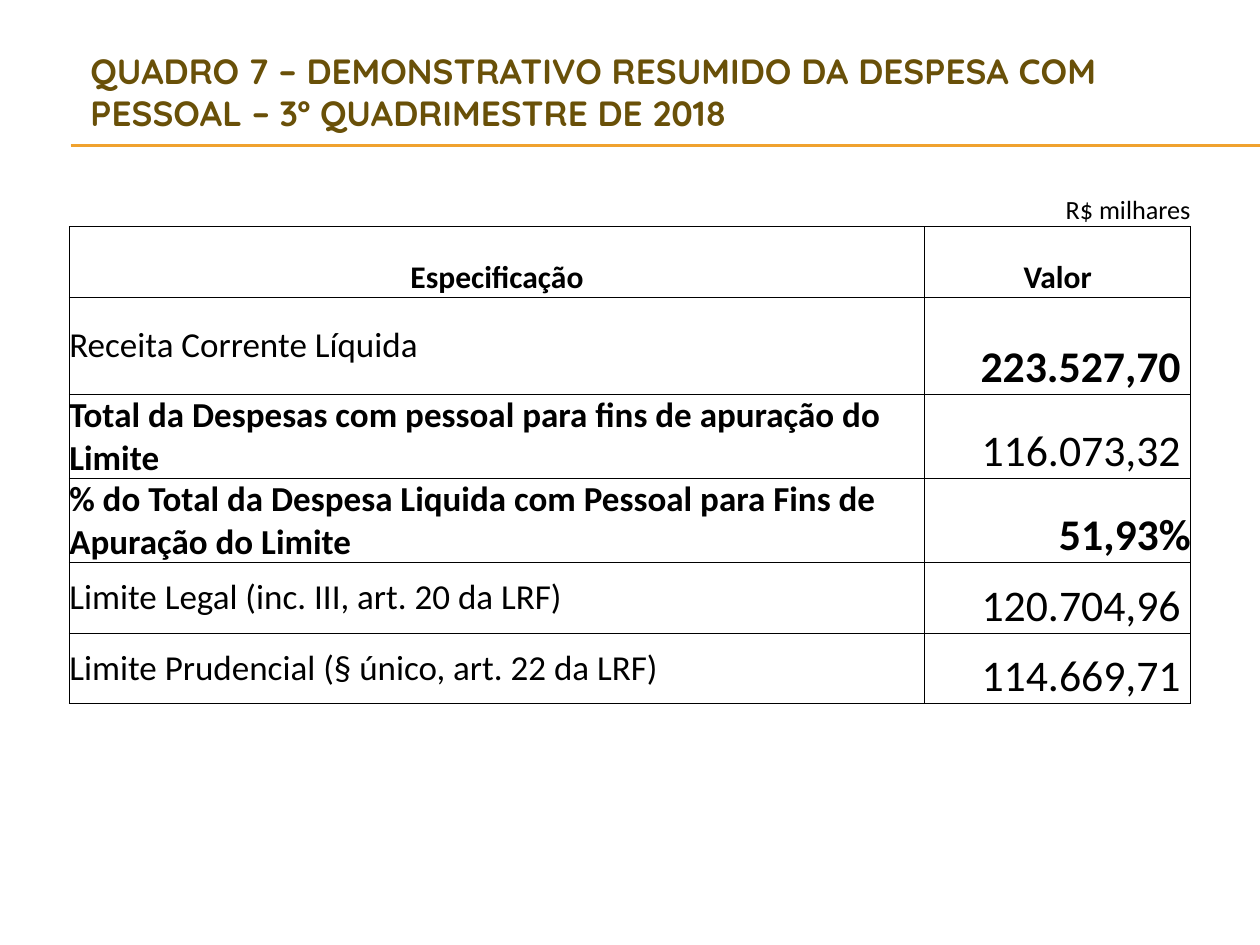
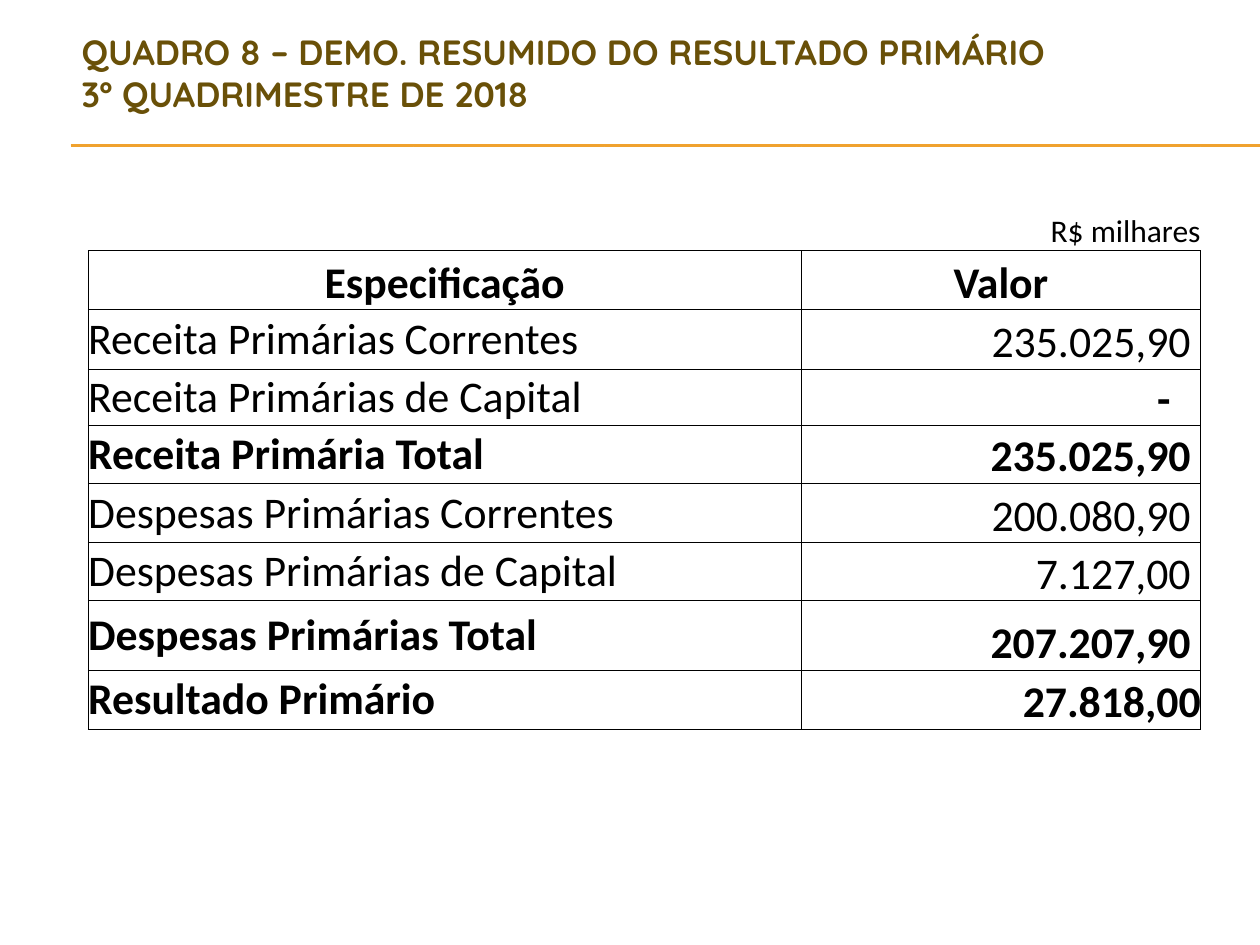
from dataclasses import dataclass
from typing import Any

from lxml.etree import SubElement
from pptx import Presentation
from pptx.dml.color import RGBColor
from pptx.enum.shapes import MSO_CONNECTOR
from pptx.enum.text import MSO_ANCHOR, PP_ALIGN
from pptx.oxml.ns import qn
from pptx.util import Inches, Pt

GOLD = RGBColor(0xF0, 0xA2, 0x2E)
BROWN = RGBColor(0x69, 0x50, 0x08)
BLACK = RGBColor(0, 0, 0)
WHITE = RGBColor(0xFF, 0xFF, 0xFF)

SLIDE_WIDTH, SLIDE_HEIGHT = Inches(10), Inches(7.5)
GRID_COLUMNS, GRID_ROWS = 100, 75
RULE_START, RULE_ROWS = 5.6, (11.5, 11.6)
VALUE_COLUMN = 4
NUMBER_GAP, DASH_GAP = 0.8, 2.4
ALL_SIDES = ("L", "R", "T", "B")
FLUSH = {"margin_left": 0, "margin_right": 0, "margin_top": 0, "margin_bottom": 0}


@dataclass(frozen=True)
class Area:
    left: float
    top: float
    width: float
    height: float


@dataclass(frozen=True)
class Entry:
    label: str
    value: str
    label_bold: bool = False
    value_bold: bool = False
    gap: float = NUMBER_GAP


@dataclass(frozen=True)
class Statement:
    title: tuple[str, ...]
    title_area: Area
    table_area: Area
    column_widths: tuple[float, ...]
    row_heights: tuple[float, ...]
    unit_size: int
    heading_size: int
    label_size: int
    value_size: int
    entries: tuple[Entry, ...]


STATEMENTS = (
    Statement(
        title=("QUADRO 7 – DEMONSTRATIVO RESUMIDO DA DESPESA COM PESSOAL – 3º QUADRIMESTRE DE 2018",),
        title_area=Area(6.2, 3.9, 85, 6.7),
        table_area=Area(5.5, 12.5, 89.1, 43.3),
        column_widths=(26.6, 14.8, 14.8, 11.7, 21.1),
        row_heights=(5.5, 5.6, 7.7, 5.6, 5.6, 5.6, 5.6),
        unit_size=15, heading_size=18, label_size=20, value_size=25,
        entries=(
            Entry("Receita Corrente Líquida", "223.527,70", value_bold=True),
            Entry("Total da Despesas com pessoal para fins de apuração do Limite",
                  "116.073,32", label_bold=True),
            Entry("% do Total da Despesa Liquida com Pessoal para Fins de Apuração do Limite",
                  "51,93%", True, True, 0),
            Entry("Limite Legal (inc. III, art. 20 da LRF)", "120.704,96"),
            Entry("Limite Prudencial (§ único, art. 22 da LRF)", "114.669,71"),
        ),
    ),
    Statement(
        title=("QUADRO 8 – DEMO. RESUMIDO DO RESULTADO PRIMÁRIO", "3º QUADRIMESTRE DE 2018"),
        title_area=Area(5.5, 0, 89.5, 11.5),
        table_area=Area(7, 11.7, 88.3, 46.1),
        column_widths=(25.8, 15.2, 15.2, 0.4, 31.7),
        row_heights=(8.2, 4.7, 4.7, 4.5, 4.6, 4.7, 4.6, 5.5, 4.7),
        unit_size=18, heading_size=25, label_size=25, value_size=25,
        entries=(
            Entry("Receita Primárias Correntes", "235.025,90"),
            Entry("Receita Primárias de Capital", "-", value_bold=True, gap=DASH_GAP),
            Entry("Receita Primária Total", "235.025,90", True, True),
            Entry("Despesas Primárias Correntes", "200.080,90"),
            Entry("Despesas Primárias de Capital", "7.127,00"),
            Entry("Despesas Primárias Total", "207.207,90", True, True),
            Entry("Resultado Primário", "27.818,00", True, True, 0),
        ),
    ),
)


def across(columns: float) -> int:
    return round(SLIDE_WIDTH * columns / GRID_COLUMNS)


def down(rows: float) -> int:
    return round(SLIDE_HEIGHT * rows / GRID_ROWS)


def place(area: Area) -> tuple[int, int, int, int]:
    return across(area.left), down(area.top), across(area.width), down(area.height)


def apply_format(target: Any, values: dict[str, Any]) -> None:
    for attribute, value in values.items():
        setattr(target, attribute, value)


def style_font(font: Any, name: str, size: int, color: RGBColor, bold: bool) -> None:
    apply_format(font, {"name": name, "size": Pt(size), "bold": bold})
    font.color.rgb = color


def draw_rules(slide: Any) -> None:
    for row in RULE_ROWS:
        rule = slide.shapes.add_connector(
            MSO_CONNECTOR.STRAIGHT, across(RULE_START), down(row), SLIDE_WIDTH, down(row))
        rule.line.color.rgb = GOLD
        rule.line.width = Pt(0.75)
        SubElement(rule.element.spPr, qn("a:effectLst"))


def draw_title(slide: Any, statement: Statement) -> None:
    frame = slide.shapes.add_textbox(*place(statement.title_area)).text_frame
    apply_format(frame, {"word_wrap": True, "vertical_anchor": MSO_ANCHOR.MIDDLE})
    paragraph = frame.paragraphs[0]
    for index, line in enumerate(statement.title):
        if index:
            paragraph.add_line_break()
        run = paragraph.add_run()
        run.text = line
        style_font(run.font, "Quicksand", 20, BROWN, True)


def draw_borders(cell: Any, sides: tuple[str, ...]) -> None:
    properties = cell._tc.get_or_add_tcPr()
    for side in sides:
        border = SubElement(properties, qn(f"a:ln{side}"), w=str(Pt(0.5)))
        fill = SubElement(border, qn("a:solidFill"))
        SubElement(fill, qn("a:srgbClr"), val=str(BLACK))


def write_cell(cell: Any, text: str, size: int, align: PP_ALIGN, bold: bool = False,
               anchor: MSO_ANCHOR = MSO_ANCHOR.BOTTOM, gap: float = 0) -> None:
    apply_format(cell, {"vertical_anchor": anchor, "margin_right": across(gap)})
    paragraph = cell.text_frame.paragraphs[0]
    paragraph.alignment = align
    run = paragraph.add_run()
    run.text = text
    style_font(run.font, "Calibri", size, BLACK, bold)


def draw_table(slide: Any, statement: Statement) -> None:
    widths, heights = statement.column_widths, statement.row_heights
    table = slide.shapes.add_table(
        len(heights), len(widths), *place(statement.table_area)).table
    apply_format(table, {"first_row": False, "horz_banding": False})
    for column, width in zip(table.columns, widths):
        column.width = across(width)
    for index, (row, height) in enumerate(zip(table.rows, heights)):
        row.height = down(height)
        for cell in row.cells:
            apply_format(cell, FLUSH)
            draw_borders(cell, ALL_SIDES if index else ("B",))
            cell.fill.background()
        if index:
            table.cell(index, 0).merge(table.cell(index, VALUE_COLUMN - 1))

    write_cell(table.cell(0, VALUE_COLUMN), "R$ milhares", statement.unit_size, PP_ALIGN.RIGHT)
    for column, heading in ((0, "Especificação"), (VALUE_COLUMN, "Valor")):
        write_cell(table.cell(1, column), heading, statement.heading_size, PP_ALIGN.CENTER, True)
    for index, entry in enumerate(statement.entries, start=2):
        write_cell(table.cell(index, 0), entry.label, statement.label_size,
                   PP_ALIGN.LEFT, entry.label_bold, MSO_ANCHOR.MIDDLE)
        write_cell(table.cell(index, VALUE_COLUMN), entry.value, statement.value_size,
                   PP_ALIGN.RIGHT, entry.value_bold, gap=entry.gap)


def main() -> None:
    presentation = Presentation()
    apply_format(presentation, {"slide_width": SLIDE_WIDTH, "slide_height": SLIDE_HEIGHT})
    blank_layout = presentation.slide_layouts[6]
    for statement in STATEMENTS:
        slide = presentation.slides.add_slide(blank_layout)
        slide.background.fill.solid()
        slide.background.fill.fore_color.rgb = WHITE
        draw_rules(slide)
        draw_title(slide, statement)
        draw_table(slide, statement)
    presentation.save("out.pptx")


if __name__ == "__main__":
    main()
